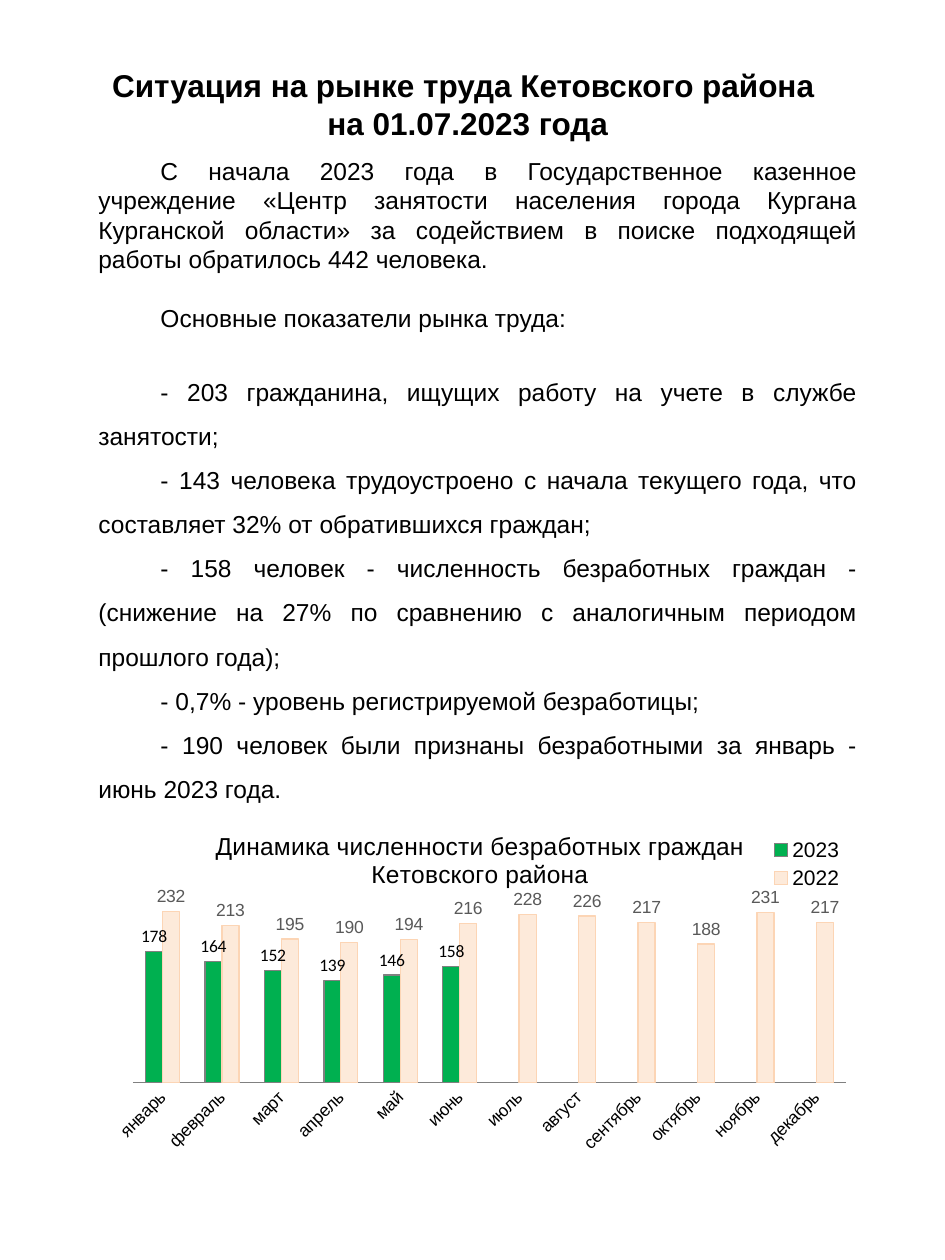
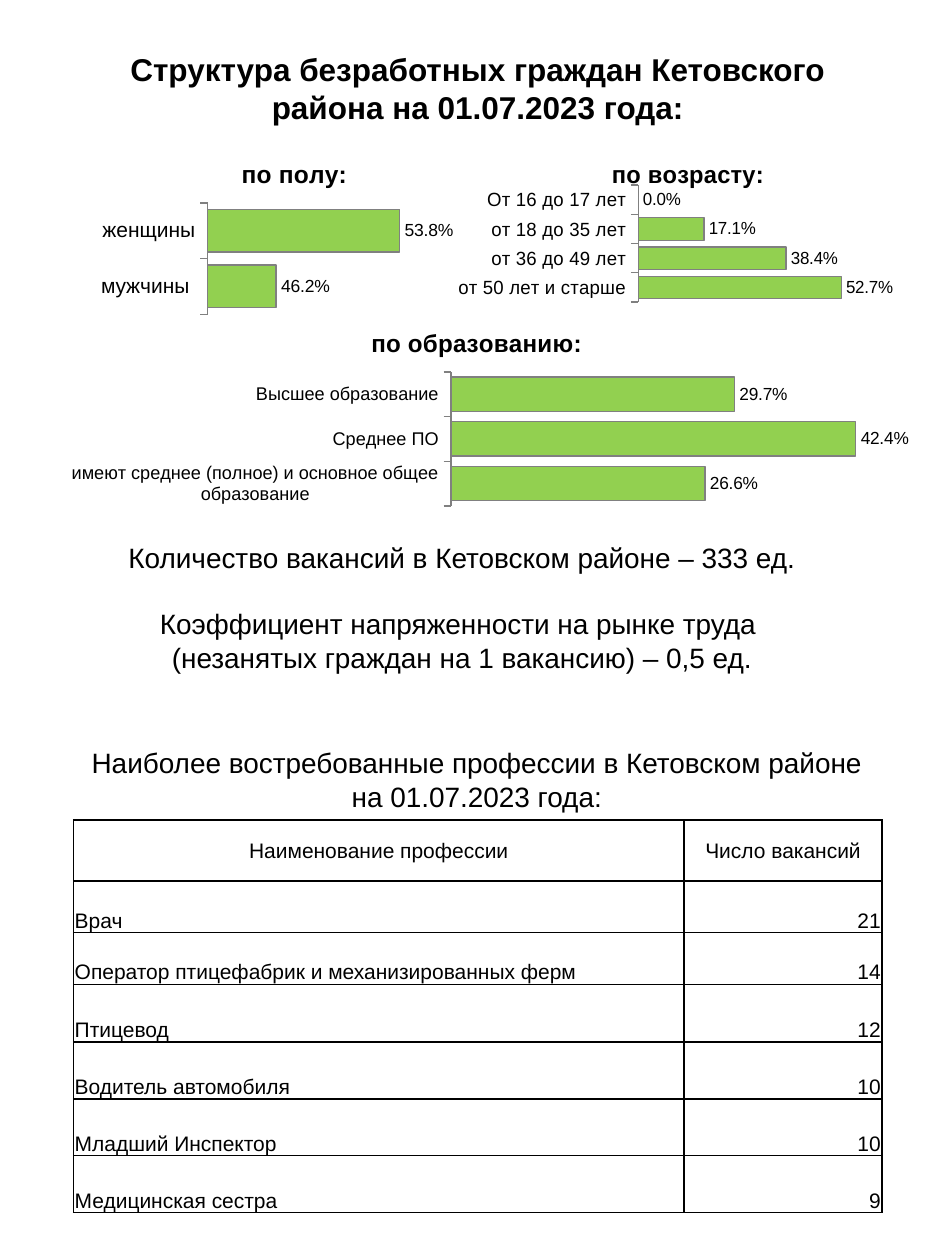
"""Build two slides on the labour market of the Кетовский district."""
from lxml import etree
from pptx import Presentation
from pptx.chart.data import CategoryChartData
from pptx.dml.color import RGBColor
from pptx.enum import chart as charts
from pptx.enum import text
from pptx.oxml import ns
from pptx.util import Pt

BLACK = RGBColor(0x00, 0x00, 0x00)
WHITE = RGBColor(0xFF, 0xFF, 0xFF)
GREY = RGBColor(0x80, 0x80, 0x80)
LABEL_GREY = RGBColor(0x59, 0x59, 0x59)
GREEN = RGBColor(0x00, 0xB0, 0x50)
LIME = RGBColor(0x92, 0xD0, 0x50)
CREAM = RGBColor(0xFD, 0xEA, 0xDA)
PEACH = RGBColor(0xFC, 0xD5, 0xB5)

LEFT = text.PP_ALIGN.LEFT
CENTER = text.PP_ALIGN.CENTER
RIGHT = text.PP_ALIGN.RIGHT
JUSTIFY = text.PP_ALIGN.JUSTIFY
TOP = text.MSO_ANCHOR.TOP
MIDDLE = text.MSO_ANCHOR.MIDDLE
BOTTOM = text.MSO_ANCHOR.BOTTOM

MONTHS = ["январь", "февраль", "март", "апрель", "май", "июнь", "июль",
          "август", "сентябрь", "октябрь", "ноябрь", "декабрь"]
UNEMPLOYED = [
    ("2023", [178, 164, 152, 139, 146, 158] + [None] * 6),
    ("2022", [232, 213, 195, 190, 194, 216, 228, 226, 217, 188, 231, 217]),
]
INTRO = [
    "С начала 2023 года в Государственное казенное учреждение «Центр занятости "
    "населения города Кургана Курганской области» за содействием в поиске "
    "подходящей работы обратилось 442 человека.",
    "Основные показатели рынка труда:",
]
INDICATORS = [
    "- 203 гражданина, ищущих работу на учете в службе занятости;",
    "- 143 человека трудоустроено с начала текущего года, что составляет 32% "
    "от обратившихся граждан;",
    "- 158 человек - численность безработных граждан - (снижение на 27% по "
    "сравнению с аналогичным периодом прошлого года);",
    "- 0,7% - уровень регистрируемой безработицы;",
    "- 190 человек были признаны безработными за январь - июнь 2023 года.",
]
VACANCIES = [
    ("Наименование профессии", "Число вакансий"),
    ("Врач", "21"),
    ("Оператор птицефабрик и механизированных ферм", "14"),
    ("Птицевод", "12"),
    ("Водитель автомобиля", "10"),
    ("Младший Инспектор", "10"),
    ("Медицинская сестра", "9"),
]


def set_font(font, size, color=BLACK, name="Arial", bold=False):
    """Apply size, colour, typeface and weight to a font."""
    font.size, font.name, font.bold = Pt(size), name, bold
    font.color.rgb = color


def write_text(paragraph, content, size=14, bold=False, align=CENTER,
               before=0, spacing=1.0, indent=0):
    """Write formatted text without a bullet into a paragraph."""
    paragraph.text = content
    paragraph.alignment = align
    paragraph.space_before, paragraph.space_after = Pt(before), Pt(0)
    paragraph.line_spacing = spacing
    properties = paragraph._p.get_or_add_pPr()
    properties.set("marL", "0")
    properties.set("indent", str(Pt(indent)))
    etree.SubElement(properties, ns.qn("a:buNone"))
    for run in paragraph.runs:
        set_font(run.font, size, bold=bold)


def set_layout(parent, index, target=None, **fractions):
    """Place a chart part by fractions of the chart area."""
    for layout in parent.findall(ns.qn("c:layout")):
        parent.remove(layout)
    layout = etree.Element(ns.qn("c:layout"))
    manual = etree.SubElement(layout, ns.qn("c:manualLayout"))
    settings = {"layoutTarget": target} if target else {}
    settings.update(xMode="edge", yMode="edge", **fractions)
    for tag, value in settings.items():
        etree.SubElement(manual, ns.qn(f"c:{tag}"), val=str(value))
    parent.insert(index, layout)


def set_borders(cell, color=BLACK, width=1):
    """Draw all four borders of a table cell."""
    properties = cell._tc.get_or_add_tcPr()
    for index, side in enumerate(("lnL", "lnR", "lnT", "lnB")):
        line = etree.Element(ns.qn(f"a:{side}"), w=str(Pt(width)))
        fill = etree.SubElement(line, ns.qn("a:solidFill"))
        etree.SubElement(fill, ns.qn("a:srgbClr"), val=str(color))
        properties.insert(index, line)


class Report:
    """Hold the report style and the current slide."""

    title_size = 18
    chart_title_size = 14
    label_size = 10
    table_size = 12

    def __init__(self):
        """Start a portrait presentation."""
        self.presentation = Presentation()
        self.presentation.slide_width = Pt(540)
        self.presentation.slide_height = Pt(720)
        self.slide = None

    def add_slide(self, title, box, anchor):
        """Add a slide with its title."""
        layout = self.presentation.slide_layouts[1]
        self.slide = self.presentation.slides.add_slide(layout)
        self.fill_shape(self.slide.shapes.title, box, anchor,
                        [(title, {"size": self.title_size, "bold": True})])

    def fill_shape(self, shape, box, anchor, lines):
        """Position a text shape and write its paragraphs."""
        shape.left, shape.top, shape.width, shape.height = map(Pt, box)
        frame = shape.text_frame
        frame.word_wrap = True
        frame.auto_size = text.MSO_AUTO_SIZE.NONE
        frame.vertical_anchor = anchor
        for index, (content, style) in enumerate(lines):
            paragraph = frame.add_paragraph() if index else frame.paragraphs[0]
            write_text(paragraph, content, **style)

    def add_body(self, box, anchor, lines):
        """Fill the body placeholder."""
        self.fill_shape(self.slide.placeholders[1], box, anchor, lines)

    def add_text(self, box, content, size):
        """Add a free text box."""
        shape = self.slide.shapes.add_textbox(*map(Pt, box))
        self.fill_shape(shape, box, TOP, [(content, {"size": size})])

    def add_chart(self, kind, box, title, title_at, plot, categories, series,
                  axis_size, limits, number_format, gap, bold=True):
        """Add a chart with a hidden value axis and return it."""
        data = CategoryChartData(number_format=number_format)
        data.categories = categories
        for name, values in series:
            data.add_series(name, values)
        chart = self.slide.shapes.add_chart(kind, *map(Pt, box), data).chart
        set_font(chart.font, 12, name="Calibri")
        chart.has_legend = False
        chart.has_title = True
        title_run = chart.chart_title.text_frame.paragraphs[0].add_run()
        title_run.text = title
        set_font(title_run.font, self.chart_title_size, bold=bold)
        set_layout(chart.chart_title._element, 1, x=title_at[0], y=title_at[1])
        set_layout(chart._chartSpace.chart.plotArea, 0, "inner",
                   **dict(zip("xywh", plot)))

        value_axis = chart.value_axis
        value_axis.has_major_gridlines = False
        value_axis.minimum_scale, value_axis.maximum_scale = limits
        value_axis.visible = False
        category_axis = chart.category_axis
        category_axis.format.line.color.rgb = GREY
        set_font(category_axis.tick_labels.font, axis_size)

        bars = chart.plots[0]
        bars.gap_width, bars.overlap = gap, 0
        bars.vary_by_categories = False
        for item in bars.series:
            self.style_series(item, LIME, GREY, number_format)
        return chart

    def style_series(self, series, fill, line, number_format,
                     label_color=BLACK, label_font="Arial"):
        """Colour a series and label its values."""
        series.format.fill.solid()
        series.format.fill.fore_color.rgb = fill
        series.format.line.color.rgb = line
        series.format.line.width = Pt(0.75)
        series.invert_if_negative = False
        labels = series.data_labels
        labels.show_value = True
        labels.number_format = number_format
        labels.number_format_is_linked = False
        labels.position = charts.XL_LABEL_POSITION.OUTSIDE_END
        set_font(labels.font, self.label_size, label_color, label_font)

    def add_bars(self, box, title, title_at, plot, shares, axis_size, limits,
                 name="Series 1", top_down=True):
        """Add a horizontal chart of shares."""
        chart = self.add_chart(
            charts.XL_CHART_TYPE.BAR_CLUSTERED, box, title, title_at, plot,
            list(shares), [(name, list(shares.values()))], axis_size, limits,
            "0.0%", 30)
        chart.category_axis.reverse_order = top_down
        chart.category_axis.major_tick_mark = charts.XL_TICK_MARK.OUTSIDE

    def add_monthly_columns(self, box):
        """Add the two-year column chart with its legend."""
        chart = self.add_chart(
            charts.XL_CHART_TYPE.COLUMN_CLUSTERED, box,
            "Динамика численности безработных граждан Кетовского района",
            (0.16, 0.02), (0.06, 0.22, 0.91, 0.51), MONTHS, UNEMPLOYED,
            10, (0, 250), "#,##0", 150, bold=False)
        current, previous = chart.plots[0].series
        self.style_series(current, GREEN, GREY, "#,##0", label_font="Calibri")
        self.style_series(previous, CREAM, PEACH, "#,##0", LABEL_GREY)
        axis = chart.category_axis
        axis.major_tick_mark = charts.XL_TICK_MARK.NONE
        axis._element.find(".//" + ns.qn("a:bodyPr")).set("rot", "-2700000")
        chart.has_legend = True
        chart.legend.position = charts.XL_LEGEND_POSITION.RIGHT
        chart.legend.include_in_layout = False
        set_font(chart.legend.font, 12)
        set_layout(chart.legend._element, 1, x=0.86, y=0.04, w=0.12, h=0.17)

    def add_table(self, left, top, widths, heights, rows):
        """Add a bordered table with a centred header."""
        table = self.slide.shapes.add_table(
            len(rows), len(widths), Pt(left), Pt(top),
            Pt(sum(widths)), Pt(sum(heights))).table
        table.first_row = table.horz_banding = False
        for column, width in zip(table.columns, widths):
            column.width = Pt(width)
        for row_index, values in enumerate(rows):
            table.rows[row_index].height = Pt(heights[row_index])
            for column_index, value in enumerate(values):
                cell = table.cell(row_index, column_index)
                align = (LEFT, RIGHT)[column_index] if row_index else CENTER
                write_text(cell.text_frame.paragraphs[0], value,
                           size=self.table_size, align=align)
                cell.vertical_anchor = BOTTOM if row_index else MIDDLE
                cell.margin_left = cell.margin_right = cell.margin_top = Pt(0.7)
                cell.margin_bottom = Pt(0)
                cell.fill.solid()
                cell.fill.fore_color.rgb = WHITE
                set_borders(cell)


def build_situation(report):
    """Build the slide on the labour market situation."""
    report.add_slide("Ситуация на рынке труда Кетовского района \vна 01.07.2023 года",
                     (37.5, 34, 459.5, 51), MIDDLE)
    style = {"align": JUSTIFY, "indent": 35.5}
    lines = [(line, dict(style, before=17 * index))
             for index, line in enumerate(INTRO)]
    lines += [(line, dict(style, spacing=1.5, before=0 if index else 17))
              for index, line in enumerate(INDICATORS)]
    report.add_body((49, 84, 448, 380), MIDDLE, lines)
    report.add_monthly_columns((49, 468, 448, 206.5))


def build_structure(report):
    """Build the slide on the unemployed and the vacancies."""
    report.add_slide("Структура безработных граждан Кетовского района на 01.07.2023 года:",
                     (49, 25, 448, 51), TOP)
    report.add_bars((49.5, 88, 210, 96.5), "по полу:", (0.41, 0),
                    (0.33, 0.29, 0.62, 0.66),
                    {"мужчины ": 0.462, "женщины": 0.538},
                    12, (0.42, 0.56), name="по полу:", top_down=False)
    report.add_bars((252.5, 88, 258, 85), "по возрасту:", (0.38, 0),
                    (0.45, 0.21, 0.53, 0.79),
                    {"От 16 до 17 лет": 0, "от 18 до 35 лет": 0.171,
                     "от 36 до 49 лет": 0.384, "от 50 лет и старше": 0.527},
                    11, (0, 0.6))
    report.add_bars((31.5, 184.5, 488, 108), "по образованию:", (0.37, 0),
                    (0.47, 0.26, 0.51, 0.71),
                    {"Высшее образование": 0.297, "Среднее ПО": 0.424,
                     "имеют среднее (полное) и основное общее образование": 0.266},
                    10.5, (0, 0.45))
    report.add_body((29.5, 305, 469, 85), TOP, [
        ("Количество вакансий в Кетовском районе – 333 ед.", {"size": 16}),
        ("Коэффициент напряженности на рынке труда ", {"size": 16, "before": 19}),
        ("(незанятых граждан на 1 вакансию) – 0,5 ед.", {"size": 16}),
    ])
    report.add_text((34.5, 422.5, 476, 46),
                    "Наиболее востребованные профессии в Кетовском районе "
                    "на 01.07.2023 года:", 16)
    report.add_table(42, 468.5, (349, 113),
                     (35, 29.5, 29.5, 33, 32.5, 32.5, 32.5), VACANCIES)


def main():
    """Build and save the report."""
    report = Report()
    build_situation(report)
    build_structure(report)
    report.presentation.save("out.pptx")


if __name__ == "__main__":
    main()
